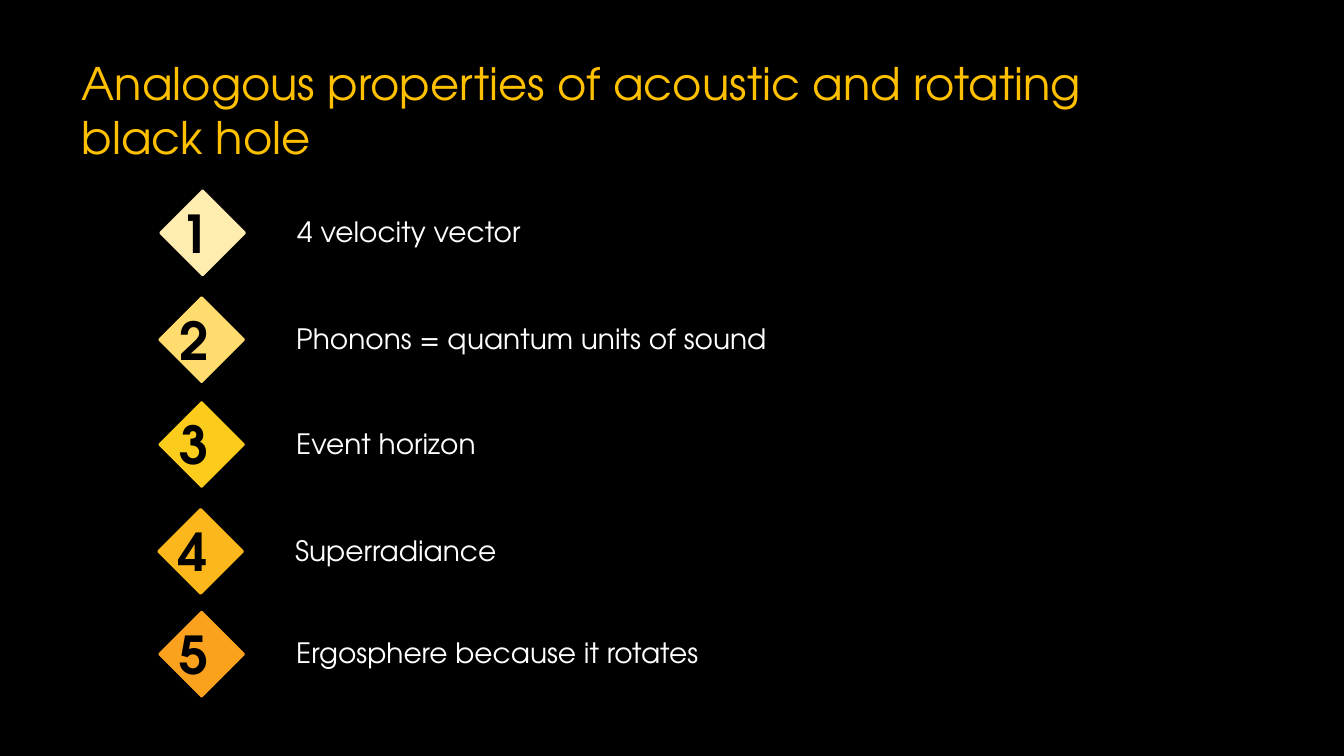
"""Build a slide listing properties shared by acoustic and rotating black holes."""
from dataclasses import dataclass

from pptx import Presentation
from pptx import util as u
from pptx.dml.color import RGBColor
from pptx.enum import shapes, text

PX = 9144
DIAMOND = 84
LABEL_GAP = 126

ITEMS = [
    ("4 velocity vector", 159, 189),
    ("Phonons = quantum units of sound", 158, 295),
    ("Event horizon", 158, 399),
    ("Superradiance", 157, 505),
    ("Ergosphere because it rotates", 158, 607),
]


@dataclass(frozen=True)
class Theme:
    """Colours, font and type sizes of the slide."""
    font: str = "TeX Gyre Adventor"
    background: str = "000000"
    title: str = "FFC000"
    label: str = "FFFFFF"
    number: str = "000000"
    steps: tuple = ("FFECAF", "FFDC6D", "FCCC1C", "FCB71C", "FAA11E")
    title_size: float = 32
    label_size: float = 20
    number_size: float = 37.3


THEME = Theme()


def rgb(value):
    """Turn a hex string into a colour."""
    return RGBColor.from_string(value)


def box(left, top, width, height):
    """Scale px lengths to EMU."""
    return [u.Emu(n * PX) for n in (left, top, width, height)]


def write(sp, words, *, size, color, bold=False, align=text.PP_ALIGN.LEFT,
          anchor=text.MSO_ANCHOR.TOP, after=0):
    """Fill a shape with one formatted paragraph."""
    tf = sp.text_frame
    tf.word_wrap = True
    tf.auto_size = text.MSO_AUTO_SIZE.NONE
    tf.vertical_anchor = anchor
    p = tf.paragraphs[0]
    p.alignment = align
    p.space_after = u.Pt(after)
    r = p.add_run()
    r.text = words
    r.font.name = THEME.font
    r.font.size = u.Pt(size)
    r.font.bold = bold
    r.font.color.rgb = rgb(color)


def add_title(s, words):
    """Place the title placeholder and write it."""
    sp = s.shapes.title
    sp.left, sp.top, sp.width, sp.height = box(71, 50, 1029, 153)
    write(sp, words, size=THEME.title_size, color=THEME.title)


def add_diamond(s, left, top, color):
    """Draw a filled diamond."""
    sp = s.shapes.add_shape(shapes.MSO_SHAPE.DIAMOND,
                            *box(left, top, DIAMOND, DIAMOND))
    sp.shadow.inherit = False
    sp.fill.solid()
    sp.fill.fore_color.rgb = rgb(color)
    sp.line.color.rgb = rgb(color)
    sp.line.width = u.Pt(1.5)


def add_text(s, words, left, top, width, height, **style):
    """Add a formatted text box."""
    sp = s.shapes.add_textbox(*box(left, top, width, height))
    write(sp, words, **style)


def add_item(s, number, label, left, top, color):
    """Draw one numbered row."""
    add_diamond(s, left, top, color)
    add_text(s, f"{number} ", left, top + 5, DIAMOND, 73,
             size=THEME.number_size, color=THEME.number, bold=True,
             align=text.PP_ALIGN.CENTER, anchor=text.MSO_ANCHOR.MIDDLE)
    add_text(s, label, left + LABEL_GAP, top + 19, 806, 44,
             size=THEME.label_size, color=THEME.label, after=18)


def main():
    """Build and save the slide."""
    prs = Presentation()
    prs.slide_width, prs.slide_height = u.Inches(13.33), u.Inches(7.5)
    s = prs.slides.add_slide(prs.slide_layouts[5])
    s.background.fill.solid()
    s.background.fill.fore_color.rgb = rgb(THEME.background)
    add_title(s, "Analogous properties of acoustic and rotating black hole")
    for number, (item, color) in enumerate(zip(ITEMS, THEME.steps), 1):
        add_item(s, number, *item, color)
    prs.save("out.pptx")


if __name__ == "__main__":
    main()
